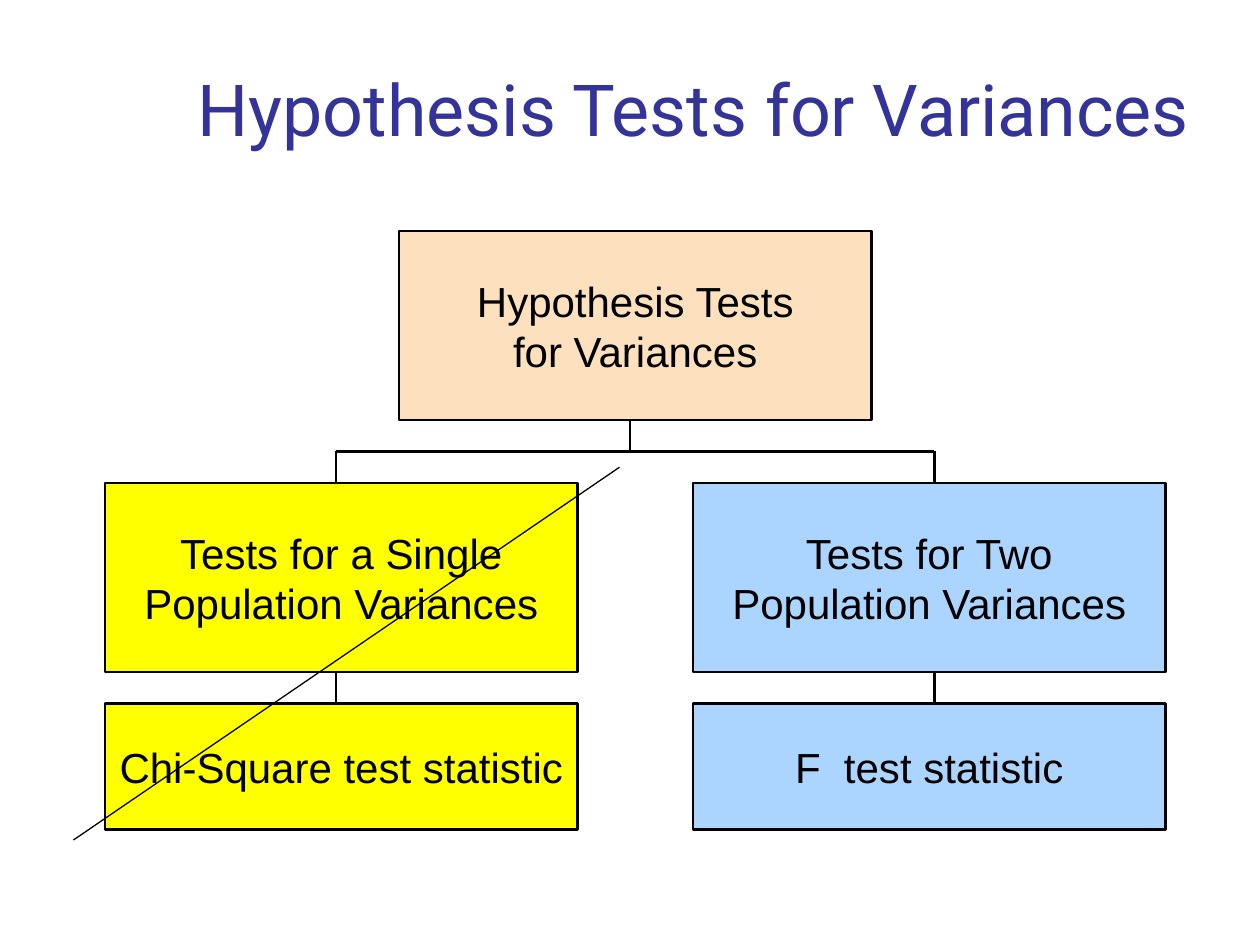
from pptx import Presentation
from pptx.dml.color import RGBColor
from pptx.enum.shapes import MSO_CONNECTOR, MSO_SHAPE
from pptx.enum.text import MSO_ANCHOR, PP_ALIGN
from pptx.oxml.ns import qn
from pptx.util import Inches, Pt
from lxml import etree

RECT = MSO_SHAPE.RECTANGLE
LINE = MSO_CONNECTOR.STRAIGHT
MIDDLE, BOTTOM = MSO_ANCHOR.MIDDLE, MSO_ANCHOR.BOTTOM
CENTER = PP_ALIGN.CENTER
COLS, ROWS = 120, 90
COLORS = {"ink": "000000", "title": "333399", "peach": "FDE0BD",
          "yellow": "FFFF00", "blue": "ABD5FF"}


def color(name):
    return RGBColor.from_string(COLORS[name])


def write(frame, text, font="Arial", size=24, ink="ink", anchor=MIDDLE, wrap=False):
    frame.word_wrap = wrap
    frame.vertical_anchor = anchor
    frame.text = text
    for para in frame.paragraphs:
        para.alignment = CENTER
        para.font.name = font
        para.font.size = Pt(size)
        para.font.color.rgb = color(ink)


class Chart:
    """Draws boxes and lines on one slide, placed by grid columns and rows."""

    def __init__(self, deck):
        self.slide = deck.slides.add_slide(deck.slide_layouts[6])
        self.col = deck.slide_width / COLS
        self.row = deck.slide_height / ROWS

    def place(self, x, y, w, h):
        return [round(v) for v in (x * self.col, y * self.row, w * self.col, h * self.row)]

    def title(self, text, x, y, w, h):
        box = self.slide.shapes.add_textbox(*self.place(x, y, w, h))
        write(box.text_frame, text, font="Roboto", size=41, ink="title",
              anchor=BOTTOM, wrap=True)

    def box(self, text, fill, x, y, h, w=45):
        shape = self.slide.shapes.add_shape(RECT, *self.place(x, y, w, h))
        shape.shadow.inherit = False
        shape.fill.solid()
        shape.fill.fore_color.rgb = color(fill)
        shape.line.color.rgb = color("ink")
        shape.line.width = Pt(1.5)
        write(shape.text_frame, text)

    def line(self, x1, y1, x2, y2, width=1.5):
        link = self.slide.shapes.add_connector(LINE, *self.place(x1, y1, x2, y2))
        link.line.color.rgb = color("ink")
        link.line.width = Pt(width)
        etree.SubElement(link._element.spPr, qn("a:effectLst"))


def main():
    deck = Presentation()
    deck.slide_width, deck.slide_height = Inches(10), Inches(7.5)
    chart = Chart(deck)
    chart.title("Hypothesis Tests for Variances", 15, 5, 102.2, 10)
    chart.box("Hypothesis Tests\nfor Variances", "peach", 38, 22, 18)
    chart.line(60, 43, 60, 40)
    chart.line(32, 43, 89, 43)
    branches = [
        (10, 32, "yellow", "Tests for a Single", "Chi-Square test statistic"),
        (66, 89, "blue", "Tests for Two", "F  test statistic"),
    ]
    for left, stem, fill, test, stat in branches:
        chart.box(f"{test}\nPopulation Variances", fill, left, 46, 18)
        chart.box(stat, fill, left, 67, 12)
        for top in (43, 64):
            chart.line(stem, top + 3, stem, top)
    chart.line(59, 44.5, 7, 80, width=0.75)
    deck.save("out.pptx")


if __name__ == "__main__":
    main()
